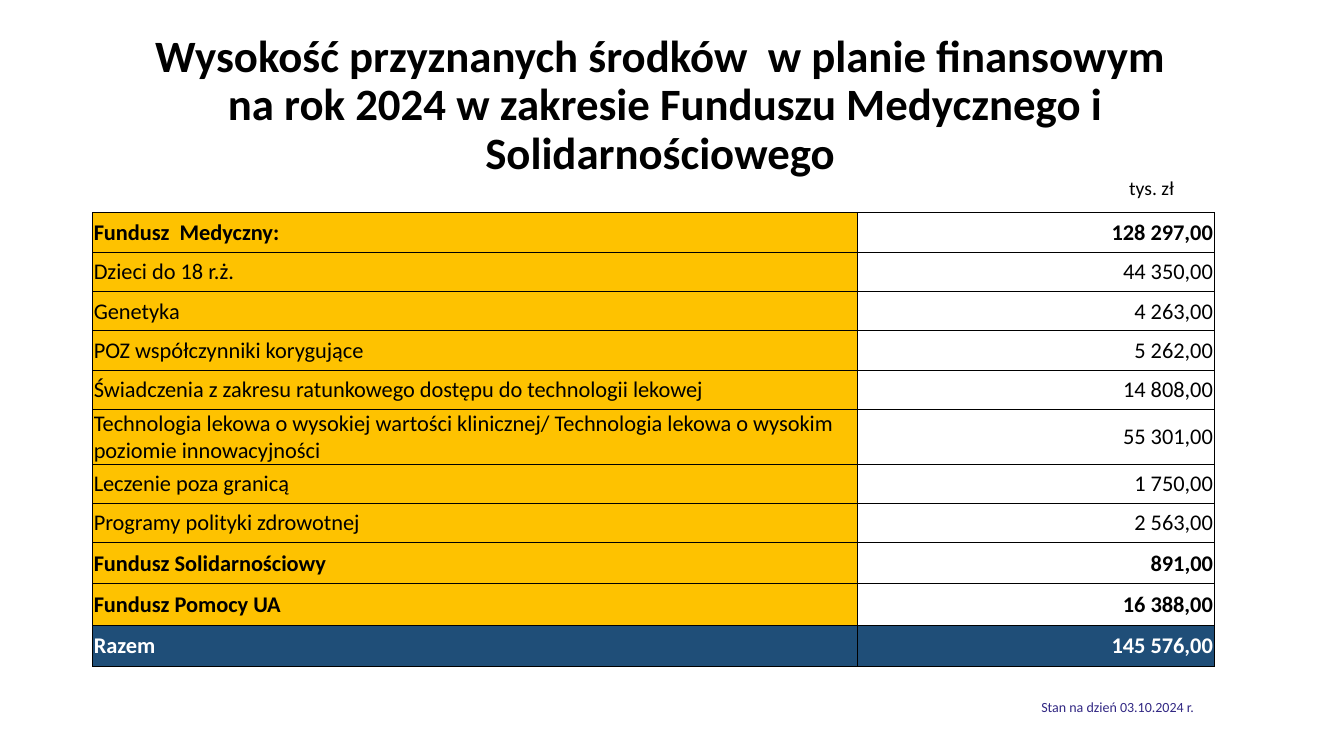
from lxml.etree import SubElement as Sub
from pptx import Presentation
from pptx.dml.color import RGBColor as Rgb
from pptx.enum.text import MSO_ANCHOR as Anchor, PP_ALIGN as Align
from pptx.oxml.ns import qn

PX = 9144
THEME = {
    "font": "Calibri",
    "ink": "000000", "gold": "FEC200", "navy": "1F4E78",
    "white": "FFFFFF", "note": "312783",
    "title": 32, "unit": 14, "body": 16, "date": 10,
}


def write(para, text, size, ink, bold=False):
    run = para.add_run()
    run.text = text
    font = run.font
    font.name = THEME["font"]
    font.size = THEME[size] * 12700
    font.bold = bold
    font.color.rgb = Rgb.from_string(THEME[ink])


def box(left, top, width, height):
    frame = slide.shapes.add_textbox(left * PX, top * PX, width * PX, height * PX).text_frame
    frame.word_wrap = True
    return frame


deck = Presentation()
deck.slide_width, deck.slide_height = 1333 * PX, 750 * PX
slide = deck.slides.add_slide(deck.slide_layouts[6])

head = box(51, 33, 1218, 145)
head.vertical_anchor = Anchor.MIDDLE
para = head.paragraphs[0]
para.alignment = Align.CENTER
para.line_spacing = 0.9
write(para, "Wysokość przyznanych środków  w planie finansowym ", "title", "ink", True)
para.add_line_break()
write(para, "na rok 2024 w zakresie Funduszu Medycznego i Solidarnościowego ", "title", "ink", True)

write(box(1110, 170, 94, 34).paragraphs[0], "tys. zł", "unit", "ink")

FUNDS = [
    ("Fundusz  Medyczny:", "128 297,00", True),
    ("Dzieci do 18 r.ż.", "44 350,00", False),
    ("Genetyka", "4 263,00", False),
    ("POZ współczynniki korygujące", "5 262,00", False),
    ("Świadczenia z zakresu ratunkowego dostępu do technologii lekowej", "14 808,00", False),
    ("Technologia lekowa o wysokiej wartości klinicznej/ Technologia lekowa o wysokim "
     "poziomie innowacyjności", "55 301,00", False),
    ("Leczenie poza granicą", "1 750,00", False),
    ("Programy polityki zdrowotnej", "2 563,00", False),
    ("Fundusz Solidarnościowy", "891,00", True),
    ("Fundusz Pomocy UA", "16 388,00", True),
    ("Razem", "145 576,00", True),
]
last = len(FUNDS) - 1
table = slide.shapes.add_table(len(FUNDS), 2, 92 * PX, 211 * PX, 1112 * PX, 447 * PX).table
table.first_row = table.horz_banding = False
for col, width in zip(table.columns, (758, 354)):
    col.width = width * PX

for i, (name, amount, bold) in enumerate(FUNDS):
    table.rows[i].height = (39 if i < 8 else 41) * PX
    for j, text in enumerate((name, amount)):
        cell = table.cell(i, j)
        cell.vertical_anchor = Anchor.MIDDLE
        cell.margin_left = cell.margin_right = cell.margin_top = PX
        cell.margin_bottom = 0
        para = cell.text_frame.paragraphs[0]
        para.alignment = (Align.LEFT, Align.RIGHT)[j]
        write(para, text, "body", "white" if i == last else "ink", bold)
        props = cell._tc.get_or_add_tcPr()
        for side in ("lnL", "lnR", "lnT", "lnB"):
            line = Sub(props, qn("a:" + side), w="6350")
            fill = Sub(line, qn("a:solidFill"))
            Sub(fill, qn("a:srgbClr"), val=THEME["ink"])
        if i == last or j == 0:
            cell.fill.solid()
            cell.fill.fore_color.rgb = Rgb.from_string(THEME["navy" if i == last else "gold"])
        else:
            cell.fill.background()

write(box(1023, 688, 246, 27).paragraphs[0], "Stan na dzień 03.10.2024 r.", "date", "note")

deck.save("out.pptx")
